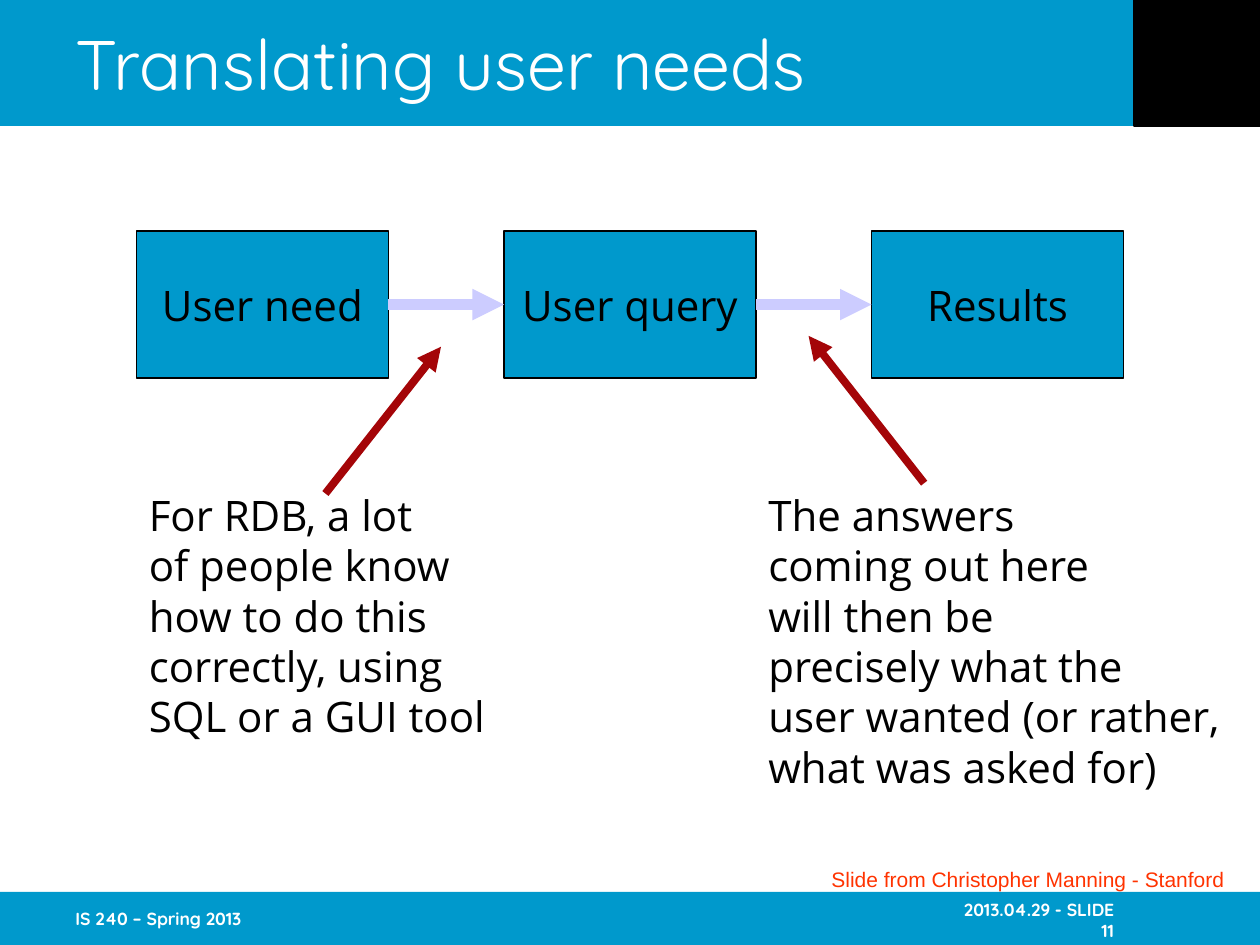
import pptx
import pptx.util
from pptx.dml.color import RGBColor
from pptx.enum.shapes import MSO_CONNECTOR, MSO_SHAPE
from pptx.enum.text import MSO_ANCHOR, MSO_AUTO_SIZE, PP_ALIGN
from pptx.oxml.ns import qn
from lxml import etree

Cm, Pt = pptx.util.Cm, pptx.util.Pt

# Content
TITLE = "Translating user needs"
STEPS = ["User need", "User query", "Results"]
NOTES = [  # text, left, top, width, height
    ("For RDB, a lot\nof people know\nhow to do this\ncorrectly, using\nSQL or a GUI tool",
     2.75, 9.74, 7.52, 5.33),
    ("The answers\ncoming out here\nwill then be\nprecisely what the\n"
     "user wanted (or rather,\vwhat was asked for)",
     15.24, 9.74, 10.03, 6.4),
]
CREDIT = "Slide from Christopher Manning - Stanford"
COURSE = "IS 240 – Spring 2013"
STAMP = "2013.04.29 - SLIDE 11"
POINTERS = [(6.56, 9.95, 8.89, 6.99), (18.63, 9.74, 16.3, 6.77)]

# Look and grid (cm)
BLUE, BLACK, WHITE = "0099CC", "000000", "FFFFFF"
LILAC, RED, ORANGE = "CCCCFF", "A40508", "FF3300"
WIDE, HIGH = 25.4, 19.05
HEAD, FOOT = 2.54, 1.07
EDGE = 1.27
BOX_W, BOX_H, BOX_Y = 5.08, 2.96, 4.66
BOX_X, STEP = 2.75, 7.41

deck = pptx.Presentation()
deck.slide_width, deck.slide_height = Cm(WIDE), Cm(HIGH)
slide = deck.slides.add_slide(deck.slide_layouts[5])
shapes = slide.shapes


def color(code):
    return RGBColor.from_string(code)


def write(shape, text, size=24, face="Open Sans", ink=BLACK, bold=False,
          align=PP_ALIGN.LEFT, anchor=MSO_ANCHOR.TOP, wrap=False,
          fit=MSO_AUTO_SIZE.NONE):
    frame = shape.text_frame
    frame.text = text
    frame.word_wrap, frame.auto_size = wrap, fit
    frame.vertical_anchor = anchor
    for para in frame.paragraphs:
        para.alignment = align
        for run in para.runs:
            font = run.font
            font.size, font.name, font.bold = Pt(size), face, bold
            font.color.rgb = color(ink)
    return frame


def rect(x, y, w, h, fill, line=None):
    shape = shapes.add_shape(MSO_SHAPE.RECTANGLE, Cm(x), Cm(y), Cm(w), Cm(h))
    shape.shadow.inherit = False
    shape.fill.solid()
    shape.fill.fore_color.rgb = color(fill)
    if line:
        shape.line.color.rgb = color(line)
        shape.line.width = Pt(0.75)
    else:
        shape.line.fill.background()
    return shape


def label(x, y, w, h, text, **form):
    return write(shapes.add_textbox(Cm(x), Cm(y), Cm(w), Cm(h)), text, **form)


def arrow(x1, y1, x2, y2, ink, width):
    link = shapes.add_connector(MSO_CONNECTOR.STRAIGHT, Cm(x1), Cm(y1), Cm(x2), Cm(y2))
    link.line.color.rgb = color(ink)
    link.line.width = Pt(width)
    etree.SubElement(link.line._get_or_add_ln(), qn("a:tailEnd"), type="triangle")
    etree.SubElement(link._element.spPr, qn("a:effectLst"))
    return link


# Bands and corner block
rect(0, 0, WIDE, HEAD, BLUE)
rect(0, HIGH - FOOT, WIDE, FOOT, BLUE)
rect(WIDE - HEAD, 0, HEAD, HEAD, BLACK, BLACK)

# Footer
foot = dict(size=10, face="Quicksand", ink=WHITE, bold=True, wrap=True)
label(EDGE, HIGH - FOOT, 5.28, FOOT, COURSE, anchor=MSO_ANCHOR.MIDDLE, **foot)
stamp = label(18.85, HIGH - FOOT, 5.28, FOOT, STAMP, align=PP_ALIGN.RIGHT,
              anchor=MSO_ANCHOR.BOTTOM, **foot)
stamp.margin_right, stamp.margin_bottom = Cm(1.67), Cm(0.08)

# Title, lifted above the bands
title = shapes.title
title.left, title.top, title.width, title.height = Cm(EDGE), 0, Cm(21.59), Cm(HEAD)
write(title, TITLE, size=40, face="Quicksand", ink=WHITE,
      anchor=MSO_ANCHOR.MIDDLE, wrap=True)
shapes._spTree.append(title._element)

# Flow of steps
boxes = []
for i, text in enumerate(STEPS):
    box = rect(BOX_X + i * STEP, BOX_Y, BOX_W, BOX_H, BLUE, BLACK)
    write(box, text, align=PP_ALIGN.CENTER, anchor=MSO_ANCHOR.MIDDLE)
    boxes.append(box)
for left, right in zip(boxes, boxes[1:]):
    link = arrow(0, 0, 1, 1, LILAC, 6)
    link.begin_connect(left, 3)
    link.end_connect(right, 1)

# Notes with their pointers
for ends in POINTERS:
    arrow(*ends, RED, 4.5)
for text, *place in NOTES:
    label(*place, text, fit=MSO_AUTO_SIZE.SHAPE_TO_FIT_TEXT)

# Credit
label(16.51, 17.35, 8.43, 0.76, CREDIT, size=12, face="Arial", ink=ORANGE,
      align=PP_ALIGN.CENTER, fit=MSO_AUTO_SIZE.SHAPE_TO_FIT_TEXT)

deck.save("out.pptx")
